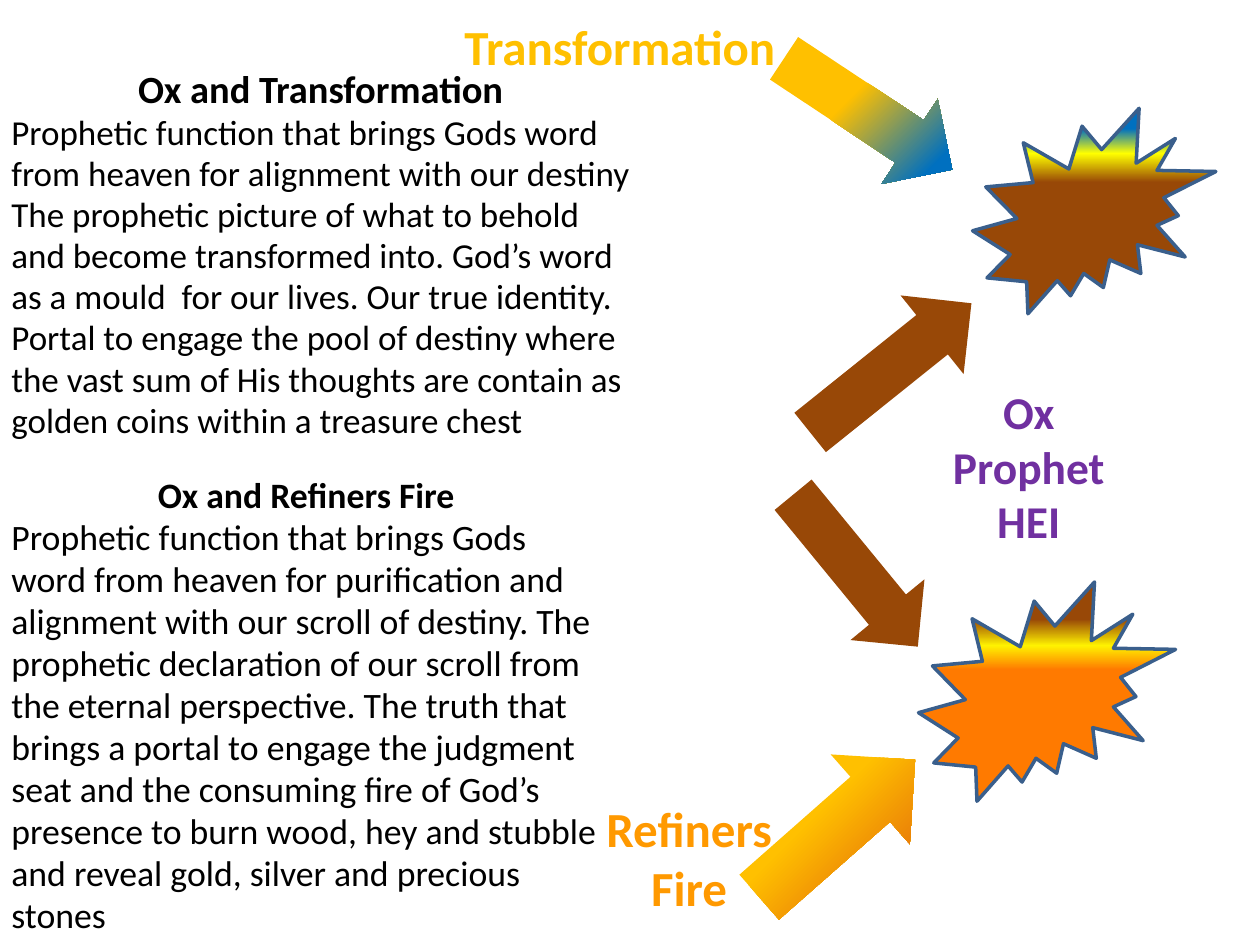
from lxml import etree
from pptx import Presentation
from pptx.dml.color import RGBColor
from pptx.enum.shapes import MSO_SHAPE
from pptx.enum.text import MSO_ANCHOR, MSO_AUTO_SIZE, PP_ALIGN
from pptx.oxml.ns import qn
from pptx.util import Pt

ARROW = MSO_SHAPE.RIGHT_ARROW
BURST = MSO_SHAPE.EXPLOSION2
TOP = MSO_ANCHOR.TOP
NO_AUTOFIT = MSO_AUTO_SIZE.NONE
CENTER = PP_ALIGN.CENTER
LEFT = PP_ALIGN.LEFT

FONT = "Calibri"
TITLE_ONLY = 5
BLACK = RGBColor(0x00, 0x00, 0x00)
PURPLE = RGBColor(0x70, 0x30, 0xA0)
GOLD = RGBColor(0xFF, 0xC0, 0x00)
AMBER = RGBColor(0xFF, 0x99, 0x00)
BROWN = RGBColor(0x98, 0x48, 0x07)
BLUE = RGBColor(0x00, 0x70, 0xC0)
YELLOW = RGBColor(0xFF, 0xFF, 0x00)
FLAME_YELLOW = RGBColor(0xFF, 0xF2, 0x00)
FLAME_ORANGE = RGBColor(0xFF, 0x7A, 0x00)
BURNT_ORANGE = RGBColor(0xE4, 0x6C, 0x0A)
OUTLINE = RGBColor(0x3A, 0x5F, 0x8C)

TRANSFORMATION_TEXT = [
    "Prophetic function that brings Gods word from heaven for alignment with "
    "our destiny The prophetic picture of what to behold and become transformed "
    "into. God’s word as a mould  for our lives. Our true identity.",
    "Portal to engage the pool of destiny where the vast sum of His thoughts "
    "are contain as golden coins within a treasure chest",
]
REFINERS_TEXT = [
    "Prophetic function that brings Gods word from heaven for purification and "
    "alignment with our scroll of destiny. The prophetic declaration of our "
    "scroll from the eternal perspective. The truth that brings a portal to "
    "engage the judgment seat and the consuming fire of God’s presence to burn "
    "wood, hey and stubble and reveal gold, silver and precious stones",
]


def place(shape, box):
    shape.left, shape.top, shape.width, shape.height = (Pt(value) for value in box)


def prepare_frame(shape):
    frame = shape.text_frame
    frame.auto_size = NO_AUTOFIT
    frame.word_wrap = True
    frame.vertical_anchor = TOP
    frame.margin_left = frame.margin_top = Pt(0)
    frame.margin_right = frame.margin_bottom = Pt(0)
    return frame


def format_paragraph(paragraph, size, color, bold=True, alignment=CENTER):
    paragraph.alignment = alignment
    for run in paragraph.runs:
        run.font.name = FONT
        run.font.size = Pt(size)
        run.font.bold = bold
        run.font.color.rgb = color


def write_label(shape, text, size, color):
    frame = prepare_frame(shape)
    frame.text = text
    for paragraph in frame.paragraphs:
        format_paragraph(paragraph, size, color)


def add_text_box(slide, box):
    return slide.shapes.add_textbox(*(Pt(value) for value in box))


def add_passage(slide, box, heading, heading_size, body, body_size):
    frame = prepare_frame(add_text_box(slide, box))
    frame.text = "\n".join([heading, *body])
    for paragraph in frame.paragraphs:
        format_paragraph(paragraph, body_size, BLACK, False, LEFT)
        paragraph.line_spacing = 0.98
    format_paragraph(frame.paragraphs[0], heading_size, BLACK)


def set_gradient(shape, stops, radial):
    shape.fill.gradient()
    gradient = shape.fill._xPr.find(qn("a:gradFill"))
    for child in list(gradient):
        gradient.remove(child)
    gradient.set("rotWithShape", "1")
    stop_list = etree.SubElement(gradient, qn("a:gsLst"))
    for percent, color in stops:
        stop = etree.SubElement(stop_list, qn("a:gs"), pos=str(percent * 1000))
        etree.SubElement(stop, qn("a:srgbClr"), val=str(color))
    if radial:
        center = etree.SubElement(gradient, qn("a:path"), path="circle")
        etree.SubElement(center, qn("a:fillToRect"), l="100000", t="100000")
    else:
        etree.SubElement(gradient, qn("a:lin"), ang="5400000", scaled="0")


def add_arrow(slide, box, rotation, start, tip=None):
    arrow = slide.shapes.add_shape(ARROW, *(Pt(value) for value in box))
    arrow.shadow.inherit = False
    arrow.rotation = rotation
    arrow.line.fill.background()
    if tip is None:
        arrow.fill.solid()
        arrow.fill.fore_color.rgb = start
    else:
        set_gradient(arrow, [(22, tip), (58, start)], radial=True)


def add_burst(slide, box, stops):
    burst = slide.shapes.add_shape(BURST, *(Pt(value) for value in box))
    burst.shadow.inherit = False
    burst.line.color.rgb = OUTLINE
    burst.line.width = Pt(2)
    set_gradient(burst, stops, radial=False)


def main():
    presentation = Presentation()
    presentation.slide_width = Pt(720)
    presentation.slide_height = Pt(540)
    slide = presentation.slides.add_slide(presentation.slide_layouts[TITLE_ONLY])

    title = slide.shapes.title
    place(title, (263.5, 9.4, 181.4, 28.8))
    write_label(title, "Transformation", 28, GOLD)
    write_label(add_text_box(slide, (529.2, 219.6, 117.4, 113)),
                "Ox\nProphet\nHEI", 26, PURPLE)
    write_label(add_text_box(slide, (342.7, 456.5, 102.2, 61.2)),
                "Refiners\vFire", 28, AMBER)

    add_passage(slide, (6.5, 38.2, 353.5, 226.8), "Ox and Transformation", 22,
                TRANSFORMATION_TEXT, 20)
    add_passage(slide, (6.5, 271.4, 337, 259.9), "Ox and Refiners Fire", 20.4,
                REFINERS_TEXT, 20.4)

    add_arrow(slide, (450, 181.4, 118.1, 57.6), 321.3, BROWN)
    add_burst(slide, (555.8, 61.9, 139, 117.4),
              [(10, BLUE), (22, YELLOW), (36, BROWN)])
    add_arrow(slide, (438.5, 36, 115.2, 58.3), 33.5, GOLD, BLUE)
    add_arrow(slide, (432.7, 298.8, 112.3, 54.7), 50.6, BROWN)
    add_arrow(slide, (419, 439.2, 118.8, 68.4), 318.6, GOLD, BURNT_ORANGE)
    add_burst(slide, (524.9, 332.6, 146.9, 125.3),
              [(17, BROWN), (29, FLAME_YELLOW), (40, FLAME_ORANGE)])

    presentation.save("out.pptx")


if __name__ == "__main__":
    main()
